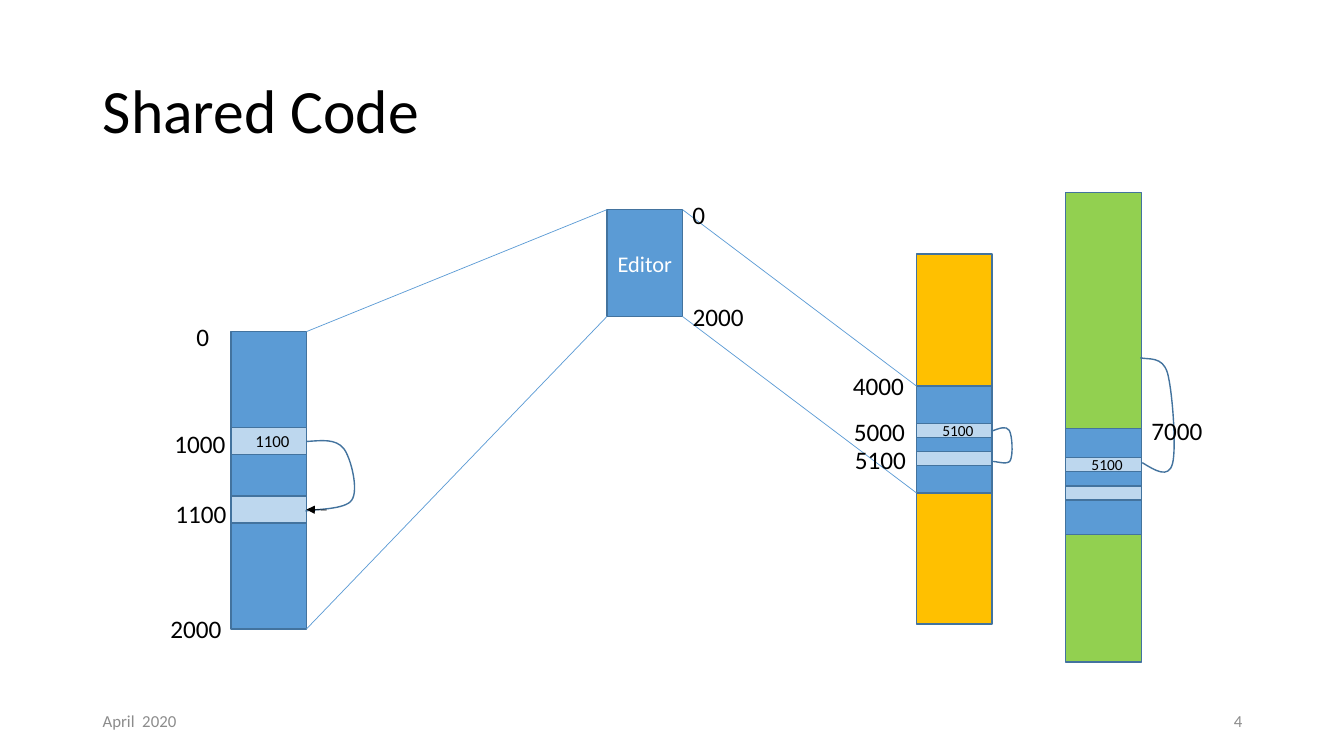
from pptx import Presentation
from pptx.dml.color import RGBColor
from pptx.enum.shapes import MSO_CONNECTOR, MSO_SHAPE
from pptx.enum.text import MSO_ANCHOR, MSO_AUTO_SIZE, PP_ALIGN
from pptx.oxml.ns import qn
from pptx.util import Pt
from lxml.etree import SubElement

PX = 9144  # EMU per px, 100 px to the inch
FONT = "Calibri"
BLUE, PALE, GREEN, ORANGE = "5B9BD5", "BDD7EE", "92D050", "FFC000"
EDGE, BLACK, WHITE, GREY = "43739E", "000000", "FFFFFF", "8C8C8C"
COL_W = 75

# Content: memory blocks as (left, top, height, fill)
EDITOR = (602, 208, 106, BLUE)
CODE = (229, 329, 295, BLUE)
SHARED_1 = (909, 383, 106, BLUE)
SHARED_2 = (1057, 425, 106, BLUE)
PROCESS_1 = [(909, 252, 131, ORANGE), (909, 488, 131, ORANGE), SHARED_1]
PROCESS_2 = [SHARED_2, (1057, 191, 234, GREEN), (1057, 530, 127, GREEN)]
# Words: (left, top of pointer, top of target, height, address, size)
WORDS = [
    (229, 424, 492, 27, "1100", 12),
    (909, 420, 448, 14, "5100", 11),
    (1057, 454, 482, 14, "5100", 11),
]
LABELS = [
    ("0", 677, 193), ("2000", 677, 294),
    ("0", 185, 314), ("2000", 159, 604), ("1000", 163, 420), ("1100", 164, 489),
    ("4000", 836, 362), ("5000", 837, 408), ("5100", 838, 436),
    ("7000", 1132, 407),
]
# Jumps: start point, then cubic curves (two controls and an end each)
JUMPS = [
    [(304, 438), (319, 437), (333, 435), (341, 445), (348, 454), (356, 486),
     (349, 496), (343, 506), (310, 505), (303, 507)],
    [(983, 428), (991, 425), (998, 422), (1001, 427), (1004, 432), (1005, 451),
     (1002, 457), (999, 462), (987, 457), (984, 458)],
    [(1133, 459), (1146, 467), (1159, 475), (1163, 460), (1167, 445), (1163, 388),
     (1158, 370), (1153, 353), (1139, 357), (1131, 355)],
]
FOOTERS = [("April  2020", 92, PP_ALIGN.LEFT), ("4", 942, PP_ALIGN.RIGHT)]


def rgb(color):
    return RGBColor.from_string(color)


def px(*lengths):
    return [n * PX for n in lengths]


def style_text(p, size, color, align=PP_ALIGN.LEFT):
    p.alignment = align
    p.font.size, p.font.name = Pt(size), FONT
    p.font.color.rgb = rgb(color)


def add_block(left, top, height, fill, text="", size=16, color=WHITE, inset=10):
    sp = shapes.add_shape(MSO_SHAPE.RECTANGLE, *px(left, top, COL_W, height))
    sp.shadow.inherit = False
    sp.fill.solid()
    sp.fill.fore_color.rgb = rgb(fill)
    sp.line.color.rgb, sp.line.width = rgb(EDGE), Pt(1)
    if text:
        tf = sp.text_frame
        tf.text = text
        tf.vertical_anchor = MSO_ANCHOR.MIDDLE
        tf.margin_left = inset * PX
        style_text(tf.paragraphs[0], size, color, PP_ALIGN.CENTER)
    return sp


def add_line(start, end, color):
    line = shapes.add_connector(MSO_CONNECTOR.STRAIGHT, *px(*start, *end))
    line.line.color.rgb, line.line.width = rgb(color), Pt(0.5)
    SubElement(line._element.spPr, qn("a:effectLst"))
    return line


def add_text(text, left, top, width, size, color, align=PP_ALIGN.LEFT):
    tf = shapes.add_textbox(*px(left, top, width, 40)).text_frame
    tf.text = text
    style_text(tf.paragraphs[0], size, color, align)
    return tf


def add_curve(points):
    builder = shapes.build_freeform(*px(*points[0]), scale=1.0)
    builder.add_line_segments([px(*pt) for pt in points[1:]], close=False)
    sp = builder.convert_to_shape()
    # Every three segments become one cubic curve
    path_xml = next(sp._element.iter(qn("a:path")))
    segments = path_xml.findall(qn("a:lnTo"))
    for i in range(0, len(segments), 3):
        curve = SubElement(path_xml, qn("a:cubicBezTo"))
        for segment in segments[i:i + 3]:
            curve.append(segment[0])
            path_xml.remove(segment)
    sp.shadow.inherit = False
    sp.fill.background()
    sp.line.color.rgb, sp.line.width = rgb(EDGE), Pt(1)


prs = Presentation()
prs.slide_width, prs.slide_height = px(1333, 750)
slide = prs.slides.add_slide(prs.slide_layouts[5])
shapes = slide.shapes

# Title
title = shapes.title
title.left, title.top, title.width, title.height = px(92, 40, 1150, 145)
title.text_frame.text = "Shared Code"
title.text_frame.vertical_anchor = MSO_ANCHOR.MIDDLE
style_text(title.text_frame.paragraphs[0], 44, BLACK)
title.text_frame.paragraphs[0].line_spacing = 0.9

# Date and slide number
for text, left, align in FOOTERS:
    tf = add_text(text, left, 695, 300, 12, GREY, align)
    tf.word_wrap = True
    tf.vertical_anchor = MSO_ANCHOR.MIDDLE

# Memory columns
for block in PROCESS_2:
    add_block(*block)
shapes.add_group_shape([add_block(*block) for block in PROCESS_1])
add_block(*EDITOR, text="Editor")
add_block(*CODE)

# Lines from the editor's corners to where its code is mapped
ed_left, ed_top, ed_h, _ = EDITOR
for (left, top, height, _), ed_x, x in [
        (CODE, ed_left, CODE[0] + COL_W),
        (SHARED_1, ed_left + COL_W, SHARED_1[0])]:
    add_line((ed_x, ed_top), (x, top), BLUE)
    add_line((ed_x, ed_top + ed_h), (x, top + height), BLUE)

# Pointer words and their targets
targets = []
for left, pointer, target, height, address, size in WORDS:
    add_block(left, pointer, height, PALE, address, size, BLACK, inset=17)
    targets.append(add_block(left, target, height, PALE))

# Jumps between pointers and targets
for points in JUMPS:
    add_curve(points)

# Arrowhead at the first target
arrow = add_line((324, 506), (304, 506), BLACK)
arrow.end_connect(targets[0], 3)
SubElement(arrow.line._get_or_add_ln(), qn("a:tailEnd"), type="triangle")

# Addresses
for text, left, top in LABELS:
    tf = add_text(text, left, top, 33 if len(text) == 1 else 71, 18, BLACK)
    tf.word_wrap = False
    tf.auto_size = MSO_AUTO_SIZE.SHAPE_TO_FIT_TEXT

prs.save("out.pptx")
